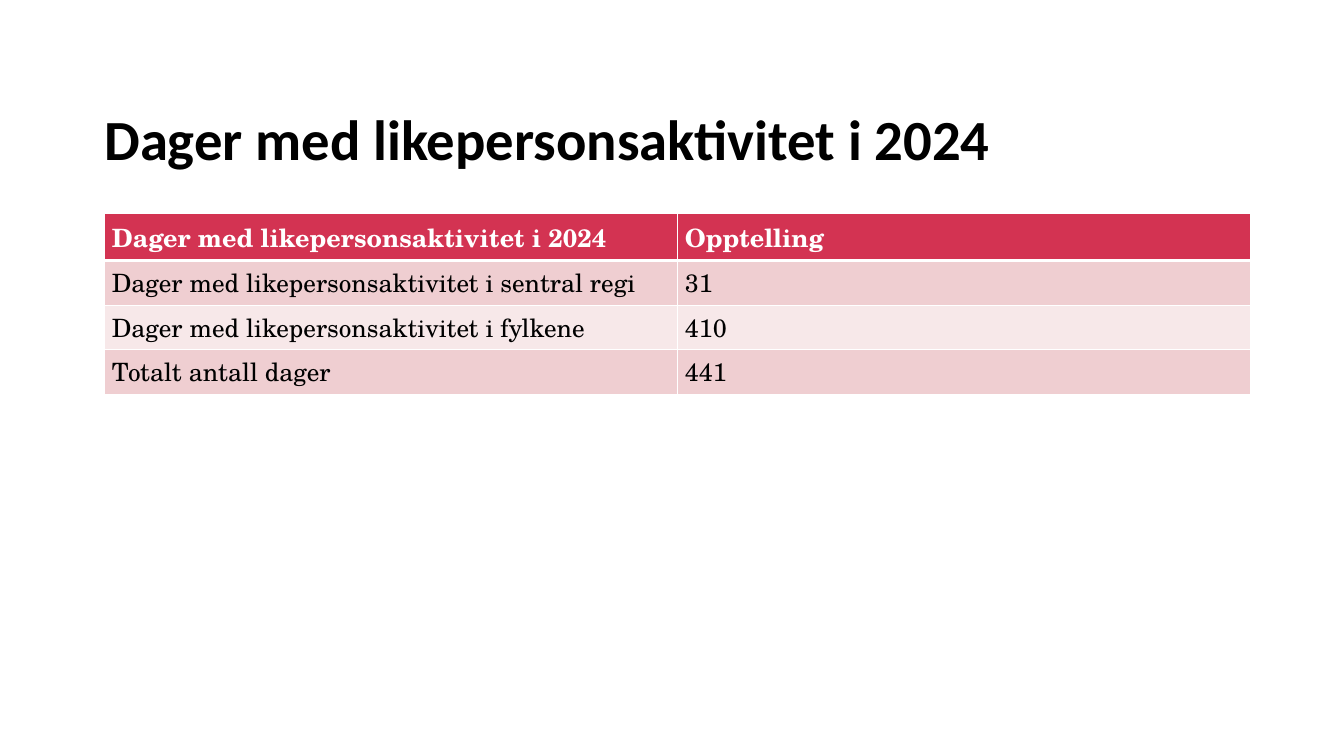
import dataclasses

import pptx
import pptx.dml.color
import pptx.enum.text
import pptx.oxml
import pptx.oxml.ns
import pptx.util

Inches = pptx.util.Inches
Pt = pptx.util.Pt

LEFT, WIDTH = 1.38, 15.16
HEADING = "Dager med likepersonsaktivitet i 2024"


@dataclasses.dataclass
class Row:
    label: str
    count: str
    fill: str
    color: str = "000000"
    bold: bool = False
    top: float = 1
    bottom: float = 1


ROWS = [
    Row(HEADING, "Opptelling", "D33352", "FFFFFF", True, bottom=3),
    Row("Dager med likepersonsaktivitet i sentral regi", "31", "EFCED1", top=3),
    Row("Dager med likepersonsaktivitet i fylkene", "410", "F7E8E9"),
    Row("Totalt antall dager", "441", "EFCED1"),
]


def rgb(code: str) -> pptx.dml.color.RGBColor:
    return pptx.dml.color.RGBColor.from_string(code)


def set_font(para, name: str, size: float, color: str, bold: bool) -> None:
    font = para.font
    font.name, font.size, font.bold = name, Pt(size), bold
    font.color.rgb = rgb(color)


def add_edge(cell, side: str, width: float) -> None:
    """Draw one white cell border."""
    names = pptx.oxml.ns.nsdecls("a")
    line = pptx.oxml.parse_xml(
        f'<a:ln{side} {names} w="{Pt(width)}"><a:solidFill>'
        f'<a:srgbClr val="FFFFFF"/></a:solidFill></a:ln{side}>'
    )
    cell._tc.get_or_add_tcPr().append(line)


def fill_cell(cell, text: str, row: Row) -> None:
    cell.text = text
    set_font(cell.text_frame.paragraphs[0], "TeX Gyre Schola", 24, row.color, row.bold)
    # Borders come before the fill in the cell properties
    for side, width in (("L", 1), ("R", 1), ("T", row.top), ("B", row.bottom)):
        add_edge(cell, side, width)
    cell.fill.solid()
    cell.fill.fore_color.rgb = rgb(row.fill)


def add_title(slide) -> None:
    title = slide.shapes.title
    title.left, title.top = Inches(LEFT), Inches(0.32)
    title.width, title.height = Inches(WIDTH), Inches(1.97)
    frame = title.text_frame
    frame.text = HEADING
    frame.word_wrap = True
    frame.auto_size = pptx.enum.text.MSO_AUTO_SIZE.NONE
    frame.vertical_anchor = pptx.enum.text.MSO_ANCHOR.BOTTOM
    frame.margin_left = frame.margin_right = 0
    frame.margin_top = frame.margin_bottom = 0
    para = frame.paragraphs[0]
    para.alignment = pptx.enum.text.PP_ALIGN.LEFT
    para.line_spacing = 0.9
    set_font(para, "Calibri", 54, "000000", True)


def add_table(slide) -> None:
    table = slide.shapes.add_table(
        len(ROWS), 2, Inches(LEFT), Inches(2.83), Inches(WIDTH), Inches(2)
    ).table
    for y, row in enumerate(ROWS):
        for x, text in enumerate((row.label, row.count)):
            fill_cell(table.cell(y, x), text, row)


def main() -> None:
    deck = pptx.Presentation()
    deck.slide_width, deck.slide_height = Inches(17.78), Inches(10)
    slide = deck.slides.add_slide(deck.slide_layouts[5])  # title only
    add_title(slide)
    add_table(slide)
    deck.save("out.pptx")


if __name__ == "__main__":
    main()
